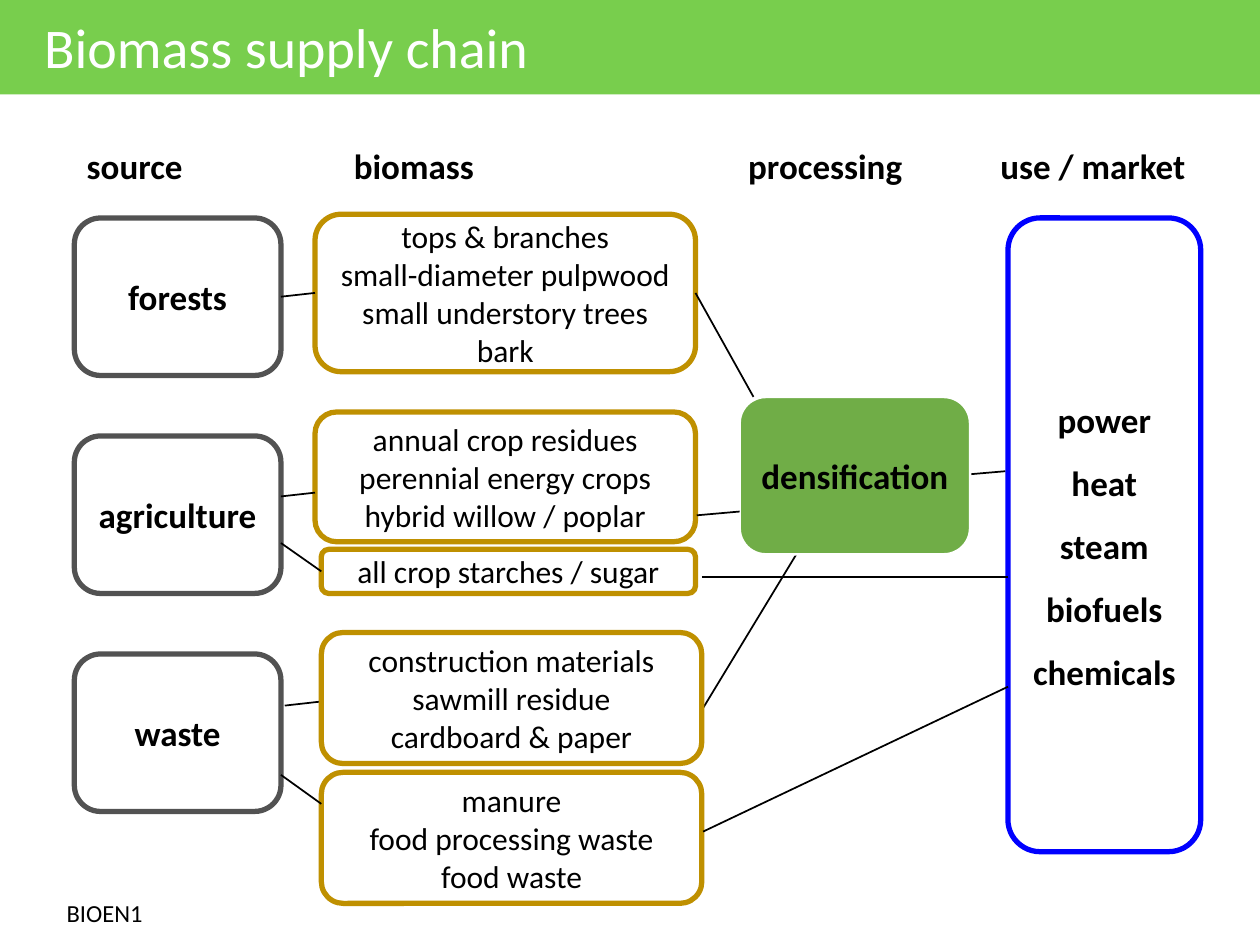
import pptx
import pptx.util
import pptx.dml.color
import pptx.enum.shapes
import pptx.enum.text
import pptx.oxml
import pptx.oxml.ns

Inches = pptx.util.Inches
Pt = pptx.util.Pt
RGBColor = pptx.dml.color.RGBColor
MSO_SHAPE = pptx.enum.shapes.MSO_SHAPE
PP_ALIGN = pptx.enum.text.PP_ALIGN
MSO_ANCHOR = pptx.enum.text.MSO_ANCHOR
MSO_AUTO_SIZE = pptx.enum.text.MSO_AUTO_SIZE

COLORS = {
    "band": "78CE4D",
    "white": "FFFFFF",
    "black": "000000",
    "source": "525252",
    "biomass": "BF9000",
    "market": "0000FF",
    "processing": "70AD47",
}


def write_lines(shape, lines, size, bold=False, color="black", align=PP_ALIGN.LEFT, spacing=None):
    frame = shape.text_frame
    for index, line in enumerate(lines):
        paragraph = frame.paragraphs[0] if index == 0 else frame.add_paragraph()
        paragraph.alignment = align
        if spacing:
            paragraph.line_spacing = spacing
        run = paragraph.add_run()
        run.text = line
        run.font.name = "Calibri"
        run.font.size = Pt(size)
        run.font.bold = bold
        run.font.color.rgb = RGBColor.from_string(COLORS[color])


def add_line(start, end):
    connector = slide.shapes.add_connector(
        pptx.enum.shapes.MSO_CONNECTOR.STRAIGHT,
        Inches(start[0]), Inches(start[1]), Inches(end[0]), Inches(end[1]))
    connector.line.color.rgb = RGBColor.from_string(COLORS["black"])
    connector.line.width = Pt(1)
    properties = connector.element.find(pptx.oxml.ns.qn("p:spPr"))
    properties.append(pptx.oxml.parse_xml("<a:effectLst %s/>" % pptx.oxml.ns.nsdecls("a")))
    return connector


presentation = pptx.Presentation()
presentation.slide_width = Inches(10)
presentation.slide_height = Inches(7.5)
slide = presentation.slides.add_slide(presentation.slide_layouts[5])

title = slide.shapes.title
title.left, title.top = Inches(0.25), Inches(0.05)
title.width, title.height = Inches(4.64), Inches(0.64)
title.text_frame.word_wrap = False
title.text_frame.auto_size = MSO_AUTO_SIZE.SHAPE_TO_FIT_TEXT
title.text_frame.vertical_anchor = MSO_ANCHOR.TOP
write_lines(title, ["Biomass supply chain"], 32, color="white")

band = slide.shapes.add_shape(MSO_SHAPE.RECTANGLE, 0, 0, Inches(10.01), Inches(0.75))
band.shadow.inherit = False
band.fill.solid()
band.fill.fore_color.rgb = RGBColor.from_string(COLORS["band"])
band.line.fill.background()
title.element.addprevious(band.element)

add_line((5.58, 5.62), (6.32, 4.4))
add_line((7.63, 3.77), (7.98, 3.74))

labels = [
    ("source", 0.59, 1.1, 1.14, 0.44, 20, True),
    ("biomass", 2.71, 1.1, 1.34, 0.44, 20, True),
    ("processing", 5.84, 1.1, 1.57, 0.44, 20, True),
    ("use / market", 7.84, 1.1, 1.69, 0.44, 20, True),
    ("BIOEN1", 0.43, 7.08, 0.81, 0.34, 14, False),
]
for text, left, top, width, height, size, is_header in labels:
    label = slide.shapes.add_textbox(Inches(left), Inches(top), Inches(width), Inches(height))
    label.text_frame.word_wrap = is_header
    label.text_frame.auto_size = MSO_AUTO_SIZE.SHAPE_TO_FIT_TEXT
    write_lines(label, [text], size, bold=is_header)

boxes = [
    ("source", 0.59, 1.73 + 1.73 * row, 1.64, 1.25, [name])
    for row, name in enumerate(["forests", "agriculture", "waste"])
] + [
    ("market", 8, 1.73, 1.53, 5.03, ["power", "heat", "steam", "biofuels", "chemicals"]),
    ("processing", 5.87, 3.15, 1.83, 1.25, ["densification"]),
    ("biomass", 2.5, 1.7, 3.02, 1.25,
     ["tops & branches", "small-diameter pulpwood", "small understory trees", "bark"]),
    ("biomass", 2.5, 3.27, 3.02, 1.03,
     ["annual crop residues", "perennial energy crops", "hybrid willow / poplar"]),
    ("biomass", 2.55, 4.36, 2.97, 0.35, ["all crop starches / sugar"]),
    ("biomass", 2.55, 5.02, 3.02, 1.04,
     ["construction materials", "sawmill residue", "cardboard & paper"]),
    ("biomass", 2.55, 6.13, 3.02, 1.04, ["manure", "food processing waste", "food waste"]),
]
box_by_name = {}
for kind, left, top, width, height, lines in boxes:
    box = slide.shapes.add_shape(
        MSO_SHAPE.ROUNDED_RECTANGLE, Inches(left), Inches(top), Inches(width), Inches(height))
    box.shadow.inherit = False
    if kind == "processing":
        box.fill.solid()
        box.fill.fore_color.rgb = RGBColor.from_string(COLORS[kind])
        box.line.color.rgb = RGBColor.from_string(COLORS["white"])
        box.line.width = Pt(1.5)
    else:
        box.fill.background()
        box.line.color.rgb = RGBColor.from_string(COLORS[kind])
        box.line.width = Pt(3)
    box.text_frame.word_wrap = True
    box.text_frame.vertical_anchor = MSO_ANCHOR.MIDDLE
    is_biomass = kind == "biomass"
    write_lines(box, lines, 18 if is_biomass else 20, bold=not is_biomass,
                align=PP_ALIGN.CENTER, spacing=1.5 if kind == "market" else None)
    box_by_name[lines[0]] = box

forest_link = add_line((2.23, 2.35), (2.5, 2.32))
forest_link.begin_connect(box_by_name["forests"], 3)
forest_link.end_connect(box_by_name["tops & branches"], 1)

starch_link = add_line((2.23, 4.31), (2.55, 4.54))
starch_link.end_connect(box_by_name["all crop starches / sugar"], 1)

branches_link = add_line((5.52, 2.32), (5.98, 3.15))
branches_link.begin_connect(box_by_name["tops & branches"], 3)

free_links = [
    ((2.23, 3.94), (2.5, 3.91)),
    ((2.23, 6.15), (2.55, 6.38)),
    ((2.26, 5.6), (2.53, 5.57)),
    ((5.53, 4.09), (5.87, 4.06)),
    ((5.57, 4.58), (8, 4.58)),
    ((5.58, 6.6), (8, 5.45)),
]
for start, end in free_links:
    add_line(start, end)

presentation.save("out.pptx")
